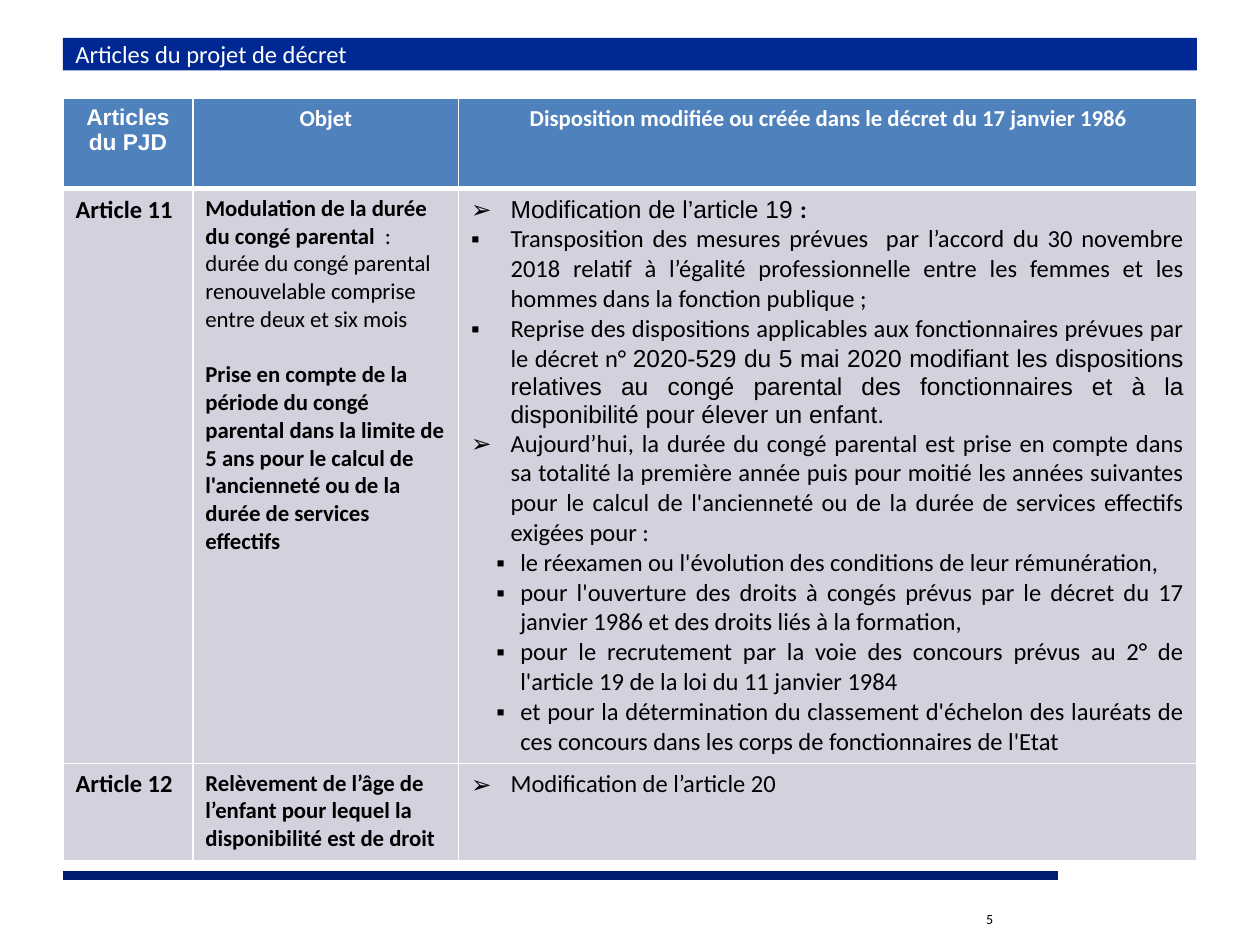
from lxml.etree import SubElement
from pptx import Presentation
from pptx.dml.color import RGBColor
from pptx.enum.shapes import MSO_CONNECTOR, MSO_SHAPE
from pptx.enum.text import MSO_ANCHOR, PP_ALIGN
from pptx.oxml import parse_xml
from pptx.oxml.ns import nsdecls, qn
from pptx.util import Pt

NAVY = RGBColor(0x00, 0x28, 0x92)
DARK = RGBColor(0x00, 0x1D, 0x72)
BLUE = RGBColor(0x4F, 0x81, 0xBD)
GREY = RGBColor(0xD1, 0xD2, 0xDE)
WHITE = RGBColor(0xFF, 0xFF, 0xFF)
BLACK = RGBColor(0x00, 0x00, 0x00)


def write(par, runs, size, color, font="Calibri"):
    """Fill a paragraph with (text, bold, font) runs; font may be None."""
    par.font.size = Pt(size)
    par.font.color.rgb = color
    par.font.name = font
    bolds = {bold for _, bold, _ in runs}
    if len(bolds) == 1:
        par.font.bold = runs[0][1]
    for text, bold, face in runs:
        run = par.add_run()
        run.text = text
        if len(bolds) > 1:
            run.font.bold = bold
        if face:
            run.font.name = face


def edge(cell, top, base):
    """Draw white borders; the side lines are 1 pt wide."""
    props = cell._tc.get_or_add_tcPr()
    sides = (("L", 1), ("R", 1), ("T", top), ("B", base))
    for spot, (side, width) in enumerate(sides):
        props.insert(spot, parse_xml(
            f'<a:ln{side} {nsdecls("a")} w="{Pt(width)}"><a:solidFill>'
            f'<a:srgbClr val="{WHITE}"/></a:solidFill></a:ln{side}>'))


prs = Presentation()
prs.slide_width, prs.slide_height = Pt(720), Pt(540)
slide = prs.slides.add_slide(prs.slide_layouts[6])
shapes = slide.shapes

# Footer rule and page number
rule = shapes.add_connector(
    MSO_CONNECTOR.STRAIGHT, Pt(604.8), Pt(500.4), Pt(36), Pt(500.4))
rule.line.color.rgb = DARK
rule.line.width = Pt(5)
SubElement(rule._element.spPr, qn("a:effectLst"))

page = shapes.add_textbox(Pt(556.5), Pt(517), Pt(162.7), Pt(36))
page.text_frame.word_wrap = True
write(page.text_frame.paragraphs[0], [("5", False, None)], 8, BLACK)

# Title band
band = shapes.add_shape(
    MSO_SHAPE.RECTANGLE, Pt(36), Pt(21.6), Pt(648), Pt(18.7))
band.shadow.inherit = False
band.fill.solid()
band.fill.fore_color.rgb = NAVY
band.line.fill.background()
frame = band.text_frame
frame.word_wrap = True
frame.margin_top = frame.margin_bottom = 0
frame.vertical_anchor = MSO_ANCHOR.MIDDLE
frame.paragraphs[0].alignment = PP_ALIGN.LEFT
write(frame.paragraphs[0], [("Articles du projet de décret", False, None)],
      14, WHITE)

# Table grid
table = shapes.add_table(3, 3, Pt(36), Pt(56.2), Pt(648), Pt(435.5)).table
for col, width in zip(table.columns, (74.2, 151.9, 421.9)):
    col.width = Pt(width)
for row, height in zip(table.rows, (51.5, 328.5, 55.5)):
    row.height = Pt(height)
for r in range(3):
    for c in range(3):
        cell = table.cell(r, c)
        cell.fill.solid()
        cell.fill.fore_color.rgb = GREY if r else BLUE
        edge(cell, 3 if r == 1 else 1, 1 if r else 3)

# Header row
heads = (
    ("Articles du PJD", "Arial"),
    ("Objet", "Calibri"),
    ("Disposition modifiée ou créée dans le décret du 17 janvier 1986",
     "Calibri"),
)
for c, (text, font) in enumerate(heads):
    par = table.cell(0, c).text_frame.paragraphs[0]
    par.alignment = PP_ALIGN.CENTER
    write(par, [(text, True, None)], 13, WHITE, font)

# Article numbers
for r, text in enumerate(("Article 11", "Article 12"), 1):
    par = table.cell(r, 0).text_frame.paragraphs[0]
    write(par, [(text, True, None)], 14, BLACK)

# Purpose of each article
goals = (
    [
        [("Modulation de la durée du congé parental ", True, None),
         (" : durée du congé parental renouvelable comprise entre deux "
          "et six mois", False, None)],
        [("Prise en compte de la période du congé parental dans la limite "
          "de 5 ans pour le calcul de l'ancienneté ou de la durée de "
          "services effectifs", True, None)],
    ],
    [
        [("Relèvement de l’âge de l’enfant pour lequel la disponibilité "
          "est de droit", True, None)],
    ],
)
for r, items in enumerate(goals, 1):
    frame = table.cell(r, 1).text_frame
    for i, runs in enumerate(items):
        par = frame.add_paragraph() if i else frame.paragraphs[0]
        if i:
            par.space_before = Pt(15.9)
        write(par, runs, 13, BLACK)

# Changed provisions: level (bullet, left margin, hanging indent) and runs
MAIN, ITEM, SUB = ("➢", 22.5, 22.5), ("▪", 22.5, 22.5), ("▪", 28.1, 13.7)
rules = (
    [
        (MAIN, [("Modification de l’article 19 ", False, "Arial"),
                (":", True, None)]),
        (ITEM, [("Transposition des mesures prévues  par l’accord du "
                 "30 novembre 2018 relatif à l’égalité professionnelle entre "
                 "les femmes et les hommes dans la fonction publique ;",
                 False, None)]),
        (ITEM, [("Reprise des dispositions applicables aux fonctionnaires "
                 "prévues par le décret n° ", False, None),
                ("2020-529 du 5 mai 2020 modifiant les dispositions relatives "
                 "au congé parental des fonctionnaires et à la disponibilité "
                 "pour élever un enfant.", False, "Arial")]),
        (MAIN, [("Aujourd’hui, la durée du congé parental est prise en compte "
                 "dans sa totalité la première année puis pour moitié les "
                 "années suivantes pour le calcul de l'ancienneté ou de la "
                 "durée de services effectifs exigées pour :", False, None)]),
        (SUB, [("le réexamen ou l'évolution des conditions de leur "
                "rémunération,", False, None)]),
        (SUB, [("pour l'ouverture des droits à congés prévus par le décret du "
                "17 janvier 1986 et des droits liés à la formation,",
                False, None)]),
        (SUB, [("pour le recrutement par la voie des concours prévus au 2° de "
                "l'article 19 de la loi du 11 janvier 1984", False, None)]),
        (SUB, [("et pour la détermination du classement d'échelon des "
                "lauréats de ces concours dans les corps de fonctionnaires "
                "de l'Etat", False, None)]),
    ],
    [(MAIN, [("Modification de l’article 20", False, None)])],
)
for r, items in enumerate(rules, 1):
    frame = table.cell(r, 2).text_frame
    for i, ((mark, left, hang), runs) in enumerate(items):
        par = frame.add_paragraph() if i else frame.paragraphs[0]
        par.alignment = PP_ALIGN.JUSTIFY
        props = par._p.get_or_add_pPr()
        props.set("marL", str(Pt(left)))
        props.set("indent", str(-Pt(hang)))
        SubElement(props, qn("a:buFont"), typeface="Arial")
        SubElement(props, qn("a:buChar"), char=mark)
        write(par, runs, 14, BLACK)

prs.save("out.pptx")
